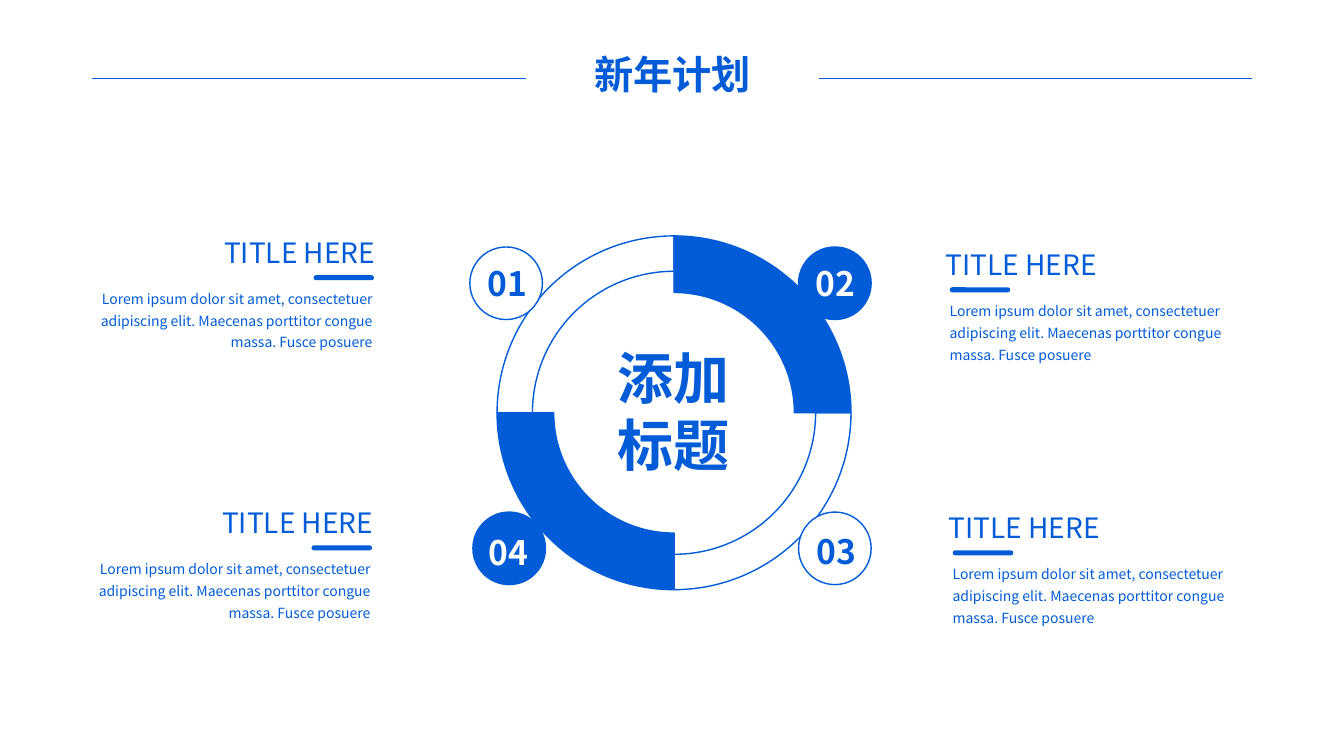
from lxml import etree
from pptx import Presentation
from pptx.dml.color import RGBColor
from pptx.enum import shapes, text
from pptx.oxml import ns
from pptx.util import Inches, Pt

BLUE = "025CD7"
WHITE = "FFFFFF"
FONT = "Noto Sans CJK SC"
LEFT, CENTER, RIGHT = text.PP_ALIGN.LEFT, text.PP_ALIGN.CENTER, text.PP_ALIGN.RIGHT
BODY = ("Lorem ipsum dolor sit amet, consectetuer adipiscing elit. "
        "Maecenas porttitor congue massa. Fusce posuere")
RING = (4.93, 2.34, 3.51, 3.51)
BADGE_SIZE = 0.72


def color(value):
    return RGBColor.from_string(value)


def box(left, top, width, height):
    return [Inches(value) for value in (left, top, width, height)]


def write_lines(frame, lines, size, ink=BLUE, bold=False, align=LEFT, spacing=None):
    """Fill a text frame with one paragraph per line."""
    frame.word_wrap = True
    for index, line in enumerate(lines):
        paragraph = frame.add_paragraph() if index else frame.paragraphs[0]
        paragraph.alignment = align
        paragraph.line_spacing = spacing
        run = paragraph.add_run()
        run.text = line
        run.font.size = Pt(size)
        run.font.bold = bold
        run.font.name = FONT
        run.font.color.rgb = color(ink)
        east_asian = etree.SubElement(run.font._element, ns.qn("a:ea"))
        east_asian.set("typeface", FONT)


def add_text(slide, place, lines, size, **style):
    shape = slide.shapes.add_textbox(*box(*place))
    write_lines(shape.text_frame, lines, size, **style)


def add_shape(slide, kind, place, fill=None, line=BLUE, adjustments=()):
    shape = slide.shapes.add_shape(kind, *box(*place))
    shape.shadow.inherit = False
    for index, value in enumerate(adjustments):
        shape.adjustments[index] = value
    if fill:
        shape.fill.solid()
        shape.fill.fore_color.rgb = color(fill)
    else:
        shape.fill.background()
    if line:
        shape.line.color.rgb = color(line)
        shape.line.width = Pt(1)
    else:
        shape.line.fill.background()
    return shape


def add_rule(slide, start, end, y):
    connector = slide.shapes.add_connector(
        shapes.MSO_CONNECTOR.STRAIGHT, Inches(start), Inches(y), Inches(end), Inches(y))
    connector.line.color.rgb = color(BLUE)
    connector.line.width = Pt(0.5)
    etree.SubElement(connector._element.spPr, ns.qn("a:effectLst"))


def add_heading(slide, title):
    for start, end in ((0.91, 5.22), (8.12, 12.42)):
        add_rule(slide, start, end, 0.78)
    heading = slide.shapes.title
    heading.left, heading.top, heading.width, heading.height = box(5.24, 0.45, 2.86, 0.57)
    heading.text_frame.vertical_anchor = text.MSO_ANCHOR.MIDDLE
    write_lines(heading.text_frame, [title], 28, bold=True, align=CENTER)


def add_quarter(slide, rotation, thickness, fill=None):
    """Add a quarter of the ring; rotation 0 is the upper left."""
    quarter = add_shape(slide, shapes.MSO_SHAPE.BLOCK_ARC, RING, fill,
                        adjustments=(107.98, 162, thickness))
    quarter.rotation = rotation


def add_badge(slide, left, top, fill):
    add_shape(slide, shapes.MSO_SHAPE.OVAL, (left, top, BADGE_SIZE, BADGE_SIZE), fill)


def add_block(slide, left, top, align):
    """Add a title, a short bar and body text, lined up on one side."""
    title_width, body_width, bar_width = 2.3, 3.32, 0.6
    body_left, bar_left = left + 0.04, left + 0.14
    if align == RIGHT:
        right = left + title_width
        body_left, bar_left = right - 0.03 - body_width, right - 0.11 - bar_width
    add_text(slide, (left, top, title_width, 0.44), ["TITLE HERE"], 20, align=align)
    add_text(slide, (body_left, top + 0.49, body_width, 0.74), [BODY], 10,
             align=align, spacing=1.3)
    add_shape(slide, shapes.MSO_SHAPE.ROUNDED_RECTANGLE,
              (bar_left, top + 0.44, bar_width, 0.05), BLUE, None, (0.5,))


def main():
    presentation = Presentation()
    presentation.slide_width, presentation.slide_height = Inches(13.33), Inches(7.5)
    slide = presentation.slides.add_slide(presentation.slide_layouts[5])

    add_heading(slide, "新年计划")

    for rotation in (180, 0):
        add_quarter(slide, rotation, 0.1)
    for rotation in (270, 90):
        add_quarter(slide, rotation, 0.16, BLUE)
    add_text(slide, (5.84, 3.36, 1.68, 1.45), ["添加", "标题"], 40, bold=True, align=CENTER)

    badges = (
        ("01", 4.66, 2.45, WHITE, BLUE, 4.74, 2.56),
        ("02", 7.92, 2.45, BLUE, WHITE, 7.99, 2.56),
        ("03", 7.92, 5.08, WHITE, BLUE, 8, 5.22),
        ("04", 4.69, 5.08, BLUE, WHITE, 4.75, 5.23),
    )
    for number, left, top, fill, ink, text_left, text_top in badges:
        add_badge(slide, left, top, fill)
        add_text(slide, (text_left, text_top, 0.63, 0.5), [number], 24, ink=ink, bold=True)

    for left, top, align in ((9.28, 2.41, LEFT), (9.31, 5.02, LEFT),
                             (1.52, 2.29, RIGHT), (1.5, 4.97, RIGHT)):
        add_block(slide, left, top, align)

    presentation.save("out.pptx")


if __name__ == "__main__":
    main()
